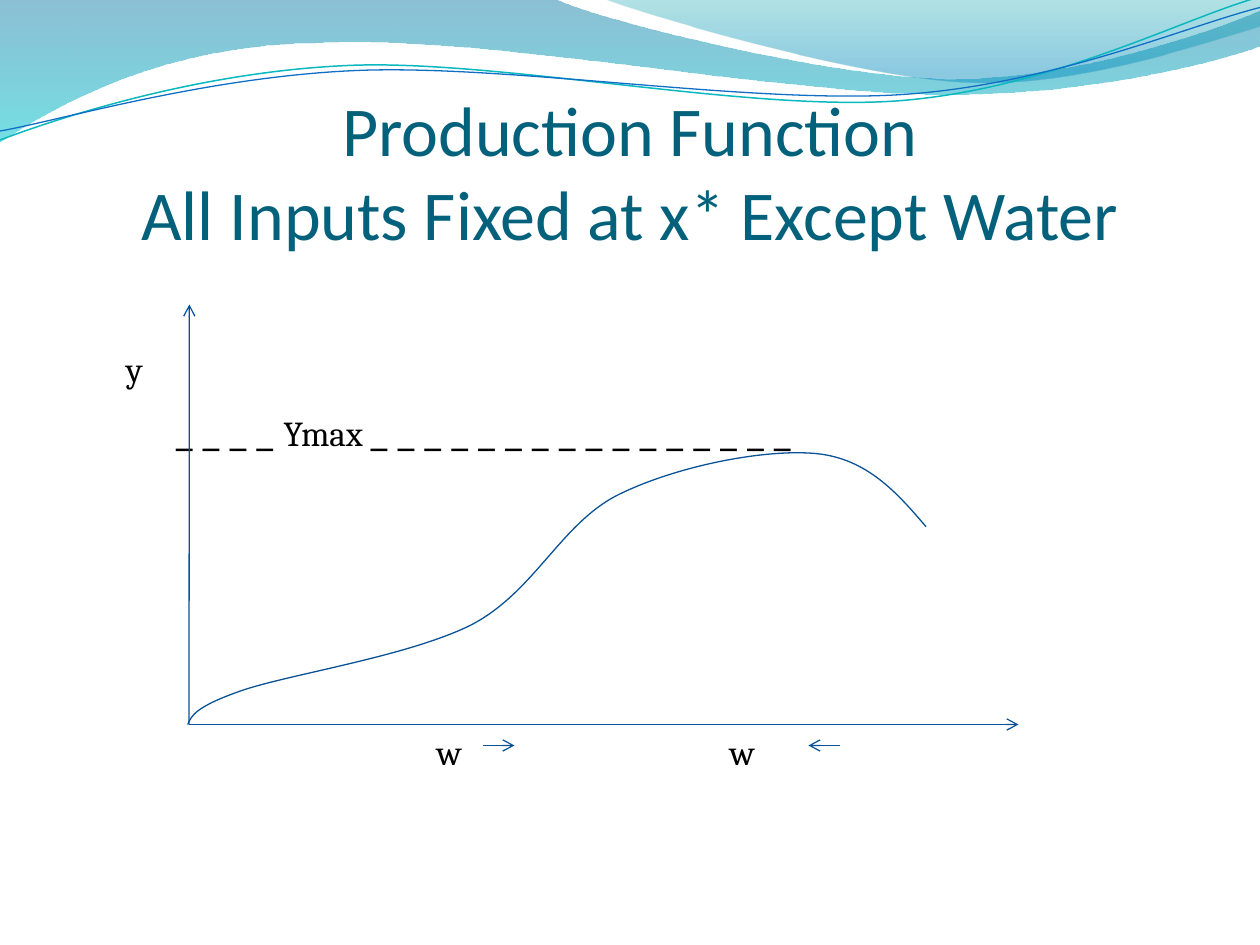
import math

import lxml.etree
import pptx
import pptx.dml.color
import pptx.enum.shapes
import pptx.enum.text
import pptx.oxml.ns
import pptx.util

Pt = pptx.util.Pt
qn = pptx.oxml.ns.qn

COLORS = {
    "title": "04617B", "text": "000000", "graph": "095295",
    "teal": "0AB8BF", "blue": "0F6FC6",
    "wave_top": "0074A1", "wave_bottom": "00C6CF",
    "crest_top": "00A1A9", "crest_bottom": "008BBF",
}
TILT = 2.7  # degrees by which the thin lines lean to the left


def rgb(name):
    return pptx.dml.color.RGBColor.from_string(COLORS[name])


def add_outline(page, left, top, start, steps, close=False):
    """Path of steps: a pair is a straight line, six numbers a cubic curve."""
    points = [(left + start[0], top + start[1])]
    for step in steps:
        points += [(left + x, top + y) for x, y in zip(step[::2], step[1::2])]
    points = [(Pt(x), Pt(y)) for x, y in points]
    builder = page.shapes.build_freeform(*points[0])
    builder.add_line_segments(points[1:], close=close)
    shape = builder.convert_to_shape()
    shape.shadow.inherit = False
    # Join each three control points into one curve
    outline = next(shape._element.spPr.iter(qn("a:path")))
    segments = iter(outline.findall(qn("a:lnTo")))
    for step in steps:
        group = [next(segments) for _ in range(len(step) // 2)]
        if len(group) == 3:
            curve = lxml.etree.Element(qn("a:cubicBezTo"))
            group[0].addprevious(curve)
            for segment in group:
                curve.append(segment[0])
                outline.remove(segment)
    return shape


def add_curve(page, left, top, start, steps, color, width):
    shape = add_outline(page, left, top, start, steps)
    shape.fill.background()
    shape.line.color.rgb = rgb(color)
    shape.line.width = Pt(width)
    return shape


def level(step, center):
    """Turn the points of a step clockwise about the center by the tilt."""
    cos, sin = math.cos(math.radians(TILT)), math.sin(math.radians(TILT))
    turned = []
    for x, y in zip(step[::2], step[1::2]):
        dx, dy = x - center[0], y - center[1]
        turned += [center[0] + dx * cos - dy * sin, center[1] + dx * sin + dy * cos]
    return tuple(turned)


def add_tilted_curve(page, left, top, center, start, steps, color, width):
    shape = add_curve(page, left, top, level(start, center),
                      [level(step, center) for step in steps], color, width)
    shape.rotation = 360 - TILT


def add_wave(page, left, top, start, steps, stops):
    """Filled wave; each stop is (position, color, opacity in percent)."""
    shape = add_outline(page, left, top, start, steps, close=True)
    shape.line.fill.background()
    shape.fill.gradient()
    shape.fill.gradient_angle = 270
    for stop, (position, color, _) in zip(shape.fill.gradient_stops, stops):
        stop.position = position
        stop.color.rgb = rgb(color)
    gradient = shape._element.spPr.find(qn("a:gradFill"))
    for element, (_, _, opacity) in zip(gradient.iter(qn("a:srgbClr")), stops):
        lxml.etree.SubElement(element, qn("a:alpha"), val=str(opacity * 1000))


def add_arrow(page, x1, y1, x2, y2):
    arrow = page.shapes.add_connector(
        pptx.enum.shapes.MSO_CONNECTOR.STRAIGHT, Pt(x1), Pt(y1), Pt(x2), Pt(y2))
    arrow.line.color.rgb = rgb("graph")
    arrow.line.width = Pt(0.75)
    lxml.etree.SubElement(arrow.line._get_or_add_ln(), qn("a:tailEnd"), type="arrow")
    lxml.etree.SubElement(arrow._element.spPr, qn("a:effectLst"))


def add_span(para, text, size, font, color):
    span = para.add_run()
    span.text = text
    span.font.size = Pt(size)
    span.font.name = font
    span.font.color.rgb = rgb(color)


def add_box(page, left, top, width, height):
    box = page.shapes.add_textbox(Pt(left), Pt(top), Pt(width), Pt(height))
    frame = box.text_frame
    frame.word_wrap = True
    frame.margin_left = frame.margin_right = frame.margin_top = frame.margin_bottom = 0
    return frame


def build_waves(page, left, top):
    # Two translucent waves
    add_wave(page, left, top, (0, -0.7),
             [(317, -0.7), (343, 12, 478, 45, 546, 45), (614, 45, 690, 19, 720, 6),
              (721, 26), (708, 32, 626, 55, 537, 54), (447, 54, 275, 20, 185, 24.5),
              (93, 25, 33, 60, -0.7, 81.4), (0, -0.7)],
             [(0, "wave_top", 45), (1, "wave_bottom", 55)])
    add_wave(page, left, top, (345, -0.7),
             [(366.5, 8, 491, 44.6, 553.7, 46.8), (616.3, 49.7, 692, 23, 720, 15),
              (720, 0), (345, -0.7)],
             [(0, "crest_top", 30), (0.8, "crest_bottom", 45)])
    # Two thin lines along the waves
    add_tilted_curve(page, left, top, (359.3, 41.4), (0, 80),
                     [(34.6, 67, 113.8, 41, 199.4, 37.4),
                      (284.4, 33.8, 427, 64, 513.4, 57.6),
                      (599.8, 51, 675.4, 10.8, 718.6, -1.4)], "teal", 0.85)
    add_tilted_curve(page, left, top, (359.6, 42.5), (0, 74.9),
                     [(33.8, 69, 118, 43.9, 203.8, 40.3),
                      (290.2, 36.7, 429.8, 59.8, 516.2, 54),
                      (602, 48.2, 677.5, 15, 720, 4.3)], "blue", 0.75)


def build_title(page, left, top, width, height):
    frame = add_box(page, left, top, width, height)
    frame.vertical_anchor = pptx.enum.text.MSO_ANCHOR.BOTTOM
    para = frame.paragraphs[0]
    para.alignment = pptx.enum.text.PP_ALIGN.CENTER
    add_span(para, "Production Function", 40, "Calibri", "title")
    para.add_line_break()
    add_span(para, "All Inputs Fixed at x* Except Water", 40, "Calibri", "title")


def build_labels(page, left, top, width, height):
    """Axis labels and the dashed maximum, set on tab stops."""
    frame = add_box(page, left, top, width, height)
    frame.margin_left = frame.margin_right = Pt(7.2)
    frame.margin_top = Pt(45.8)
    rows = [
        (0, [28.8], [("\ty", 20)]),
        (6.6, [57.4], [("\t_ _ _ _ ", 26), ("Ymax ", 20), (" ".join("_" * 16), 26)]),
        (157.3, [206.4, 373.8], [("\tw", 20), ("\tw", 20)]),
    ]
    for index, (gap, stops, spans) in enumerate(rows):
        para = frame.add_paragraph() if index else frame.paragraphs[0]
        if index:
            para.space_before = Pt(gap)
        tabs = lxml.etree.SubElement(para._p.get_or_add_pPr(), qn("a:tabLst"))
        for stop in stops:
            lxml.etree.SubElement(tabs, qn("a:tab"), pos=str(Pt(stop)), algn="l")
        for text, size in spans:
            add_span(para, text, size, "Cambria", "text")


def build_graph(page, left, top, width, height):
    # Axes, then the arrows beside each w
    base = top + height
    add_arrow(page, left, base, left + width, base)
    add_arrow(page, left, base, left + 0.2, top)
    for start, end in ((168, 186), (372, 354)):
        add_arrow(page, left + start, base + 12, left + end, base + 12)
    # Production curve
    add_curve(page, left, top, (-0.7, 240),
              [(1.4, 235, 3.6, 229.9, 30.2, 220.6), (57.6, 211.2, 125.3, 201.1, 161.3, 183.1),
               (197.3, 164.4, 212.4, 125.5, 244.8, 109), (277.9, 92.4, 329, 82.3, 358.6, 85.2),
               (387.4, 88.1, 404.6, 107.5, 421.2, 127)], "graph", 0.75)


def main():
    deck = pptx.Presentation()
    deck.slide_width, deck.slide_height = Pt(720), Pt(540)
    page = deck.slides.add_slide(deck.slide_layouts[6])
    build_waves(page, 0, 0)
    build_title(page, 36, 55.5, 648, 90)
    build_labels(page, 36, 152.6, 648, 345.6)
    build_graph(page, 108, 174, 474, 240)
    deck.save("out.pptx")


if __name__ == "__main__":
    main()
